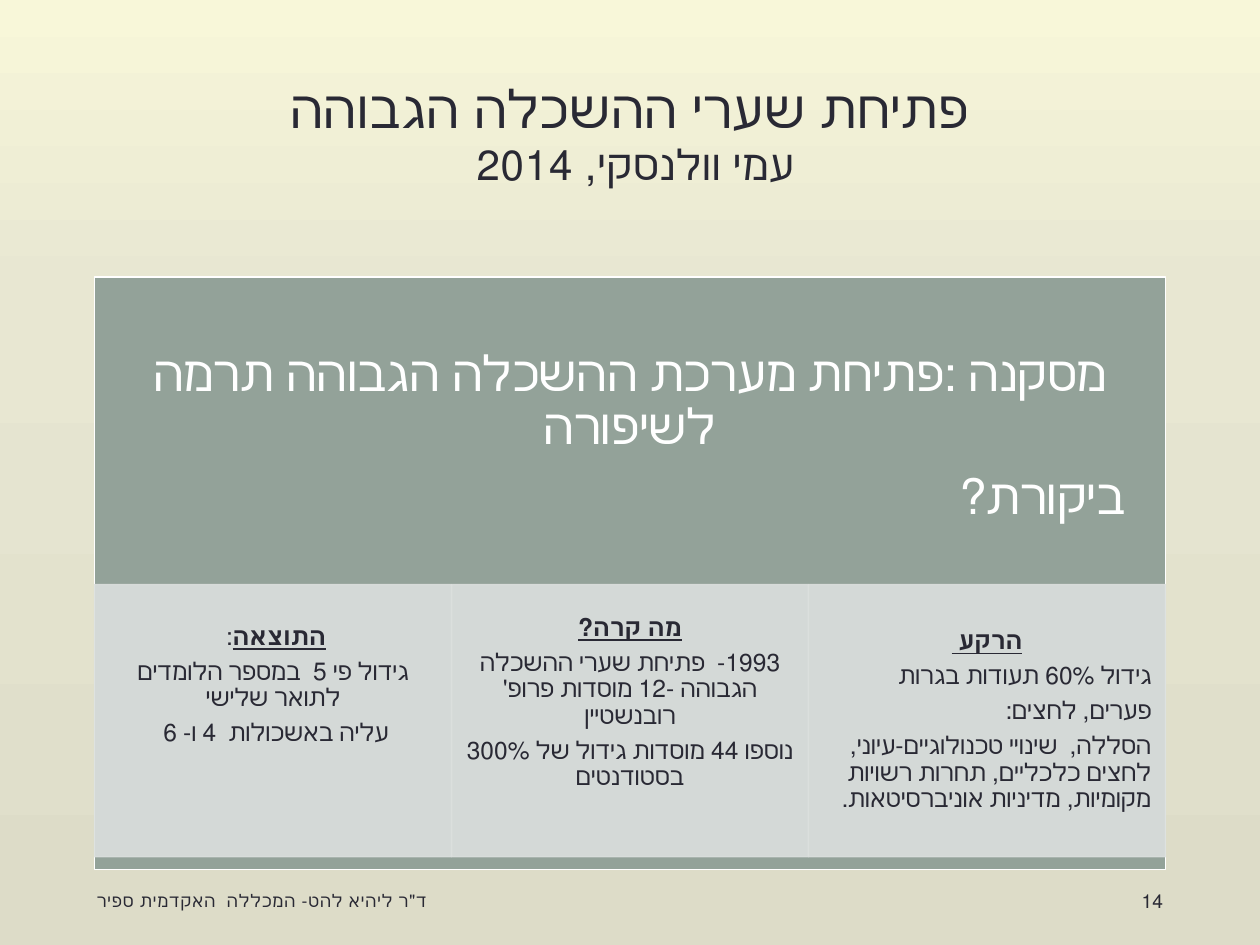
import copy

import pptx
import pptx.dml.color
import pptx.enum.shapes
import pptx.enum.text
import pptx.oxml.ns
import pptx.util

Inches = pptx.util.Inches
Pt = pptx.util.Pt
qn = pptx.oxml.ns.qn
ALIGN = pptx.enum.text.PP_ALIGN
ANCHOR = pptx.enum.text.MSO_ANCHOR

# Content
TITLE = ("פתיחת שערי ההשכלה הגבוהה", "עמי וולנסקי, 2014 ")
CONCLUSION = [
    ("מסקנה :פתיחת מערכת ההשכלה הגבוהה תרמה לשיפורה", ALIGN.CENTER),
    (" ביקורת? ", ALIGN.RIGHT),
]
# Left to right; "lift" is the number of text rows the block sits above the bottom
COLUMNS = [
    {"heading": "התוצאה", "tail": ": ", "align": ALIGN.CENTER, "lift": 2,
     "lines": ["גידול פי 5  במספר הלומדים לתואר שלישי",
               "עליה באשכולות  4 ו- 6 "]},
    {"heading": "מה קרה?", "tail": "", "align": ALIGN.CENTER, "lift": 1,
     "lines": ["1993-  פתיחת שערי ההשכלה הגבוהה -12 מוסדות פרופ' רובנשטיין",
               "נוספו 44 מוסדות גידול של 300% בסטודנטים"]},
    {"heading": "הרקע ", "tail": "", "align": ALIGN.RIGHT, "lift": 0,
     "lines": ["גידול 60% תעודות בגרות ",
               "פערים, לחצים:",
               "הסללה,  שינויי טכנולוגיים-עיוני, לחצים כלכליים, תחרות רשויות "
               "מקומיות, מדיניות אוניברסיטאות.  "]},
]
FOOTER = "ד\"ר ליהיא להט- המכללה  האקדמית ספיר"
PAGE_NUMBER = "14"

THEME = {
    "font": "Arial Narrow",
    "background": [(0, "F8F7D9"), (0.31, "E8E7D2"), (1, "DDDCC8")],
    "ink": "292934", "white": "FFFFFF", "panel": "93A299", "column": "DCE0DE",
    "title": 30, "subtitle": 24, "conclusion": 28, "body": 14,
    "footer": 10, "number": 11, "line": 0.85, "column_opacity": 90,
}

# Layout, in inches
PANEL = (0.75, 2.2, 8.5, 4.7)
CONCLUSION_HEIGHT = 2.54
COLUMN_TOP, COLUMN_HEIGHT = 4.64, 2.16
ROW_STEP = 0.28


def rgb(name):
    return pptx.dml.color.RGBColor.from_string(THEME.get(name, name))


def paint_background(slide):
    fill = slide.background.fill
    fill.gradient()
    fill.gradient_angle = 270
    stop_list = slide.element.find(".//" + qn("a:gsLst"))
    stop_list.append(copy.deepcopy(stop_list[-1]))
    for stop, (position, color) in zip(fill.gradient_stops, THEME["background"]):
        stop.position = position
        stop.color.rgb = rgb(color)


def add_box(slide, area, color, line_color, opacity=100):
    shape = slide.shapes.add_shape(
        pptx.enum.shapes.MSO_SHAPE.RECTANGLE, *map(Inches, area))
    shape.shadow.inherit = False
    shape.fill.solid()
    shape.fill.fore_color.rgb = rgb(color)
    shape.line.color.rgb = rgb(line_color)
    shape.line.width = Pt(THEME["line"])
    if opacity < 100:
        for color_element in shape.element.spPr.iter(qn("a:srgbClr")):
            alpha = color_element.makeelement(qn("a:alpha"), {"val": str(opacity * 1000)})
            color_element.append(alpha)
    return shape


def prepare_frame(shape, anchor, margins=(0.1, 0.05, 0.1, 0.05)):
    frame = shape.text_frame
    frame.word_wrap = True
    frame.vertical_anchor = anchor
    (frame.margin_left, frame.margin_top,
     frame.margin_right, frame.margin_bottom) = map(Inches, margins)
    return frame


def add_text_box(slide, area, anchor, **options):
    return prepare_frame(slide.shapes.add_textbox(*map(Inches, area)), anchor, **options)


def add_paragraph(frame, text, size, align, color="ink", spaced=False):
    first = frame.paragraphs[0]
    paragraph = frame.add_paragraph() if first.runs else first
    paragraph.alignment = align
    paragraph._p.get_or_add_pPr().set("rtl", "1")
    if spaced:
        paragraph.line_spacing = 0.9
        paragraph.space_after = Pt(THEME[size] * 0.35)
    paragraph.font.name = THEME["font"]
    paragraph.font.size = Pt(THEME[size])
    paragraph.font.color.rgb = rgb(color)
    paragraph.add_run().text = text
    return paragraph


def track(paragraph, points):
    for run in paragraph.runs:
        run.font._element.set("spc", str(round(points * 100)))


def add_title(slide):
    frame = add_text_box(slide, (0.67, 0.3, 8.67, 1.25), ANCHOR.BOTTOM)
    paragraph = add_paragraph(frame, TITLE[0], "title", ALIGN.CENTER)
    paragraph.add_line_break()
    subtitle = paragraph.add_run()
    subtitle.text = TITLE[1]
    subtitle.font.size = Pt(THEME["subtitle"])
    track(paragraph, 0.5)


def add_panel(slide):
    left, top, width, _ = PANEL
    add_box(slide, PANEL, "panel", "white")
    frame = add_text_box(slide, (left, top, width, CONCLUSION_HEIGHT),
                         ANCHOR.MIDDLE, margins=(0.22,) * 4)
    for text, align in CONCLUSION:
        add_paragraph(frame, text, "conclusion", align, "white", spaced=True)

    column_width = width / len(COLUMNS)
    for index, column in enumerate(COLUMNS):
        area = (left + index * column_width, COLUMN_TOP, column_width, COLUMN_HEIGHT)
        shape = add_box(slide, area, "column", "column", THEME["column_opacity"])
        frame = prepare_frame(shape, ANCHOR.MIDDLE,
                              (0.11, 0.02, 0.11, 0.02 + column["lift"] * ROW_STEP))
        heading = add_paragraph(frame, column["heading"], "body", ALIGN.CENTER, spaced=True)
        heading.runs[0].font.bold = True
        heading.runs[0].font.underline = True
        if column["tail"]:
            heading.add_run().text = column["tail"]
        for line in column["lines"]:
            add_paragraph(frame, line, "body", column["align"], spaced=True)


def add_footer(slide):
    frame = add_text_box(slide, (0.67, 6.95, 3.17, 0.4), ANCHOR.MIDDLE)
    track(add_paragraph(frame, FOOTER, "footer", ALIGN.LEFT), 0.6)
    frame = add_text_box(slide, (8.25, 6.95, 1.08, 0.4), ANCHOR.MIDDLE)
    add_paragraph(frame, PAGE_NUMBER, "number", ALIGN.RIGHT)


def main():
    presentation = pptx.Presentation()
    presentation.slide_width = Inches(10)
    presentation.slide_height = Inches(7.5)
    slide = presentation.slides.add_slide(presentation.slide_layouts[6])
    paint_background(slide)
    add_title(slide)
    add_panel(slide)
    add_footer(slide)
    presentation.save("out.pptx")


if __name__ == "__main__":
    main()
